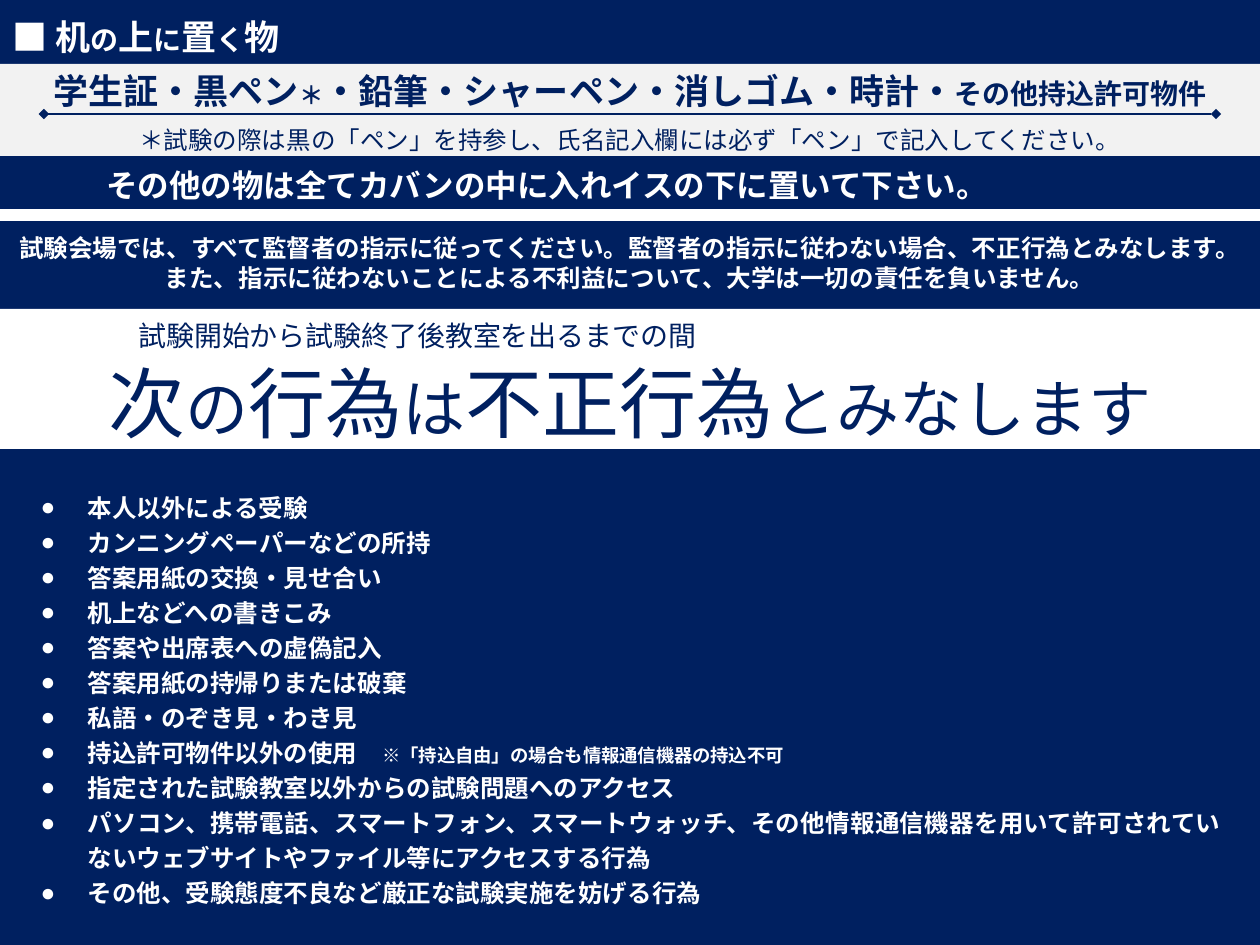
from dataclasses import dataclass

from lxml.etree import SubElement
from pptx import Presentation
from pptx.dml.color import RGBColor
from pptx.enum.shapes import MSO_CONNECTOR as Link, MSO_SHAPE as Shape
from pptx.enum.text import MSO_ANCHOR as Anchor, MSO_AUTO_SIZE as Fit, PP_ALIGN as Align
from pptx.oxml.ns import qn
from pptx.util import Emu, Pt

NAVY = RGBColor(0x00, 0x20, 0x60)
WHITE = RGBColor(0xFF, 0xFF, 0xFF)
PALE = RGBColor(0xF2, 0xF2, 0xF2)
FONT = "Noto Sans CJK JP"
SCALE = 914400 / 126


@dataclass(frozen=True)
class Box:
    left: int
    top: int
    width: int
    height: int
    inset: int


@dataclass(frozen=True)
class Para:
    runs: tuple[tuple[str, float], ...]
    pitch: int
    color: RGBColor = WHITE
    bold: bool = True
    align: Align = Align.CENTER
    margin: int = 0
    bullet: str = ""


def px(n: int) -> Emu:
    return Emu(round(n * SCALE))


def place(shape, box: Box) -> None:
    shape.left, shape.top = px(box.left), px(box.top)
    shape.width, shape.height = px(box.width), px(box.height)


def write(shape, box: Box, paras: list[Para]) -> None:
    frame = shape.text_frame
    frame.word_wrap = True
    frame.auto_size = Fit.NONE
    frame.vertical_anchor = Anchor.TOP
    frame.margin_top, frame.margin_bottom = px(box.inset), 0
    frame.text = "\n".join("" for _ in paras)
    for line, para in zip(frame.paragraphs, paras):
        line.alignment = para.align
        line.line_spacing = Pt(para.pitch)
        line.space_before = line.space_after = Pt(0)
        props = line._p.get_or_add_pPr()
        props.set("marL", str(px(para.margin)))
        props.set("indent", str(-px(para.margin) if para.bullet else 0))
        if para.bullet:
            SubElement(props, qn("a:buChar"), char=para.bullet)
        for text, size in para.runs:
            run = line.add_run()
            run.text = text
            font = run.font
            font.name, font.size, font.bold = FONT, Pt(size), para.bold
            font.color.rgb = para.color
            SubElement(run._r.get_or_add_rPr(), qn("a:ea"), typeface=FONT)


def label(slide, box: Box, paras: list[Para]) -> None:
    shape = slide.shapes.add_textbox(0, 0, 0, 0)
    place(shape, box)
    write(shape, box, paras)


def band(slide, box: Box, fill: RGBColor, paras: list[Para]) -> None:
    shape = slide.shapes.add_shape(Shape.RECTANGLE, 0, 0, 0, 0)
    place(shape, box)
    shape.shadow.inherit = False
    shape.fill.solid()
    shape.fill.fore_color.rgb = fill
    shape.line.fill.background()
    write(shape, box, paras)


def rule(slide, start: int, end: int, y: int, color: RGBColor,
         width: float, tip: str = "") -> None:
    line = slide.shapes.add_connector(Link.STRAIGHT, px(start), px(y), px(end), px(y))
    line.line.color.rgb = color
    line.line.width = Pt(width)
    if tip:
        edge = line.line._get_or_add_ln()
        for side in ("a:headEnd", "a:tailEnd"):
            SubElement(edge, qn(side), type=tip)
    SubElement(line._element.spPr, qn("a:effectLst"))


TITLE = (("■ 机", 20), ("の", 16), ("上", 20), ("に", 16), ("置", 20), ("く", 16), ("物", 20))
ITEMS = (
    (("学生証・黒ペン", 20), ("＊", 14),
     ("・鉛筆・シャーペン・消しゴム・時計・", 20), ("その他持込許可物件", 16))
)
PENS = (("＊試験の際は黒の「ペン」を持参し、氏名記入欄には必ず「ペン」で記入してください。", 14),)
REST = (("その他の物は全てカバンの中に入れイスの下に置いて下さい。", 18),)
NOTICE = (
    "試験会場では、すべて監督者の指示に従ってください。監督者の指示に従わない場合、不正行為とみなします。",
    "また、指示に従わないことによる不利益について、大学は一切の責任を負いません。",
)
SPAN = (("試験開始から試験終了後教室を出るまでの間", 16),)
CLAIM = (("次", 44), ("の", 36), ("行為", 44), ("は", 36), ("不正行為", 44), ("とみなします", 36))
ACTS = (
    (("本人以外による受験", 14),),
    (("カンニングペーパーなどの所持", 14),),
    (("答案用紙の交換・見せ合い", 14),),
    (("机上などへの書きこみ", 14),),
    (("答案や出席表への虚偽記入", 14),),
    (("答案用紙の持帰りまたは破棄", 14),),
    (("私語・のぞき見・わき見", 14),),
    (("持込許可物件以外の使用　", 14), ("※「持込自由」の場合も情報通信機器の持込不可", 10.5)),
    (("指定された試験教室以外からの試験問題へのアクセス", 14),),
    (("パソコン、携帯電話、スマートフォン、スマートウォッチ、その他情報通信機器を用いて"
      "許可されていないウェブサイトやファイル等にアクセスする行為", 14),),
    (("その他、受験態度不良など厳正な試験実施を妨げる行為", 14),),
)


def main() -> None:
    deck = Presentation()
    deck.slide_width, deck.slide_height = px(1260), px(945)
    slide = deck.slides.add_slide(deck.slide_layouts[1])
    slide.background.fill.solid()
    slide.background.fill.fore_color.rgb = NAVY

    title, body = slide.shapes.title, slide.placeholders[1]
    head = Box(0, 0, 1260, 58, 9)
    place(title, head)
    write(title, head, [Para(TITLE, 28, align=Align.LEFT)])
    area = Box(28, 481, 1206, 431, 6)
    place(body, area)
    write(body, area, [Para(act, 20, align=Align.JUSTIFY, margin=47, bullet="●")
                       for act in ACTS])

    label(slide, Box(8, 156, 1245, 50, 6),
          [Para(REST, 24, align=Align.LEFT, margin=86)])
    band(slide, Box(0, 309, 1260, 140, 8), WHITE,
         [Para(SPAN, 20, NAVY, False, Align.LEFT, 126), Para(CLAIM, 55, NAVY, False)])
    label(slide, Box(0, 226, 1260, 72, 7),
          [Para(((text, 14),), 17) for text in NOTICE])
    band(slide, Box(0, 64, 1260, 92, 5), PALE,
         [Para(ITEMS, 24, NAVY), Para(PENS, 25, NAVY, False)])
    rule(slide, 44, 1216, 114, NAVY, 1.5, "diamond")
    rule(slide, 0, 1260, 215, WHITE, 6.75)
    deck.save("out.pptx")


if __name__ == "__main__":
    main()
